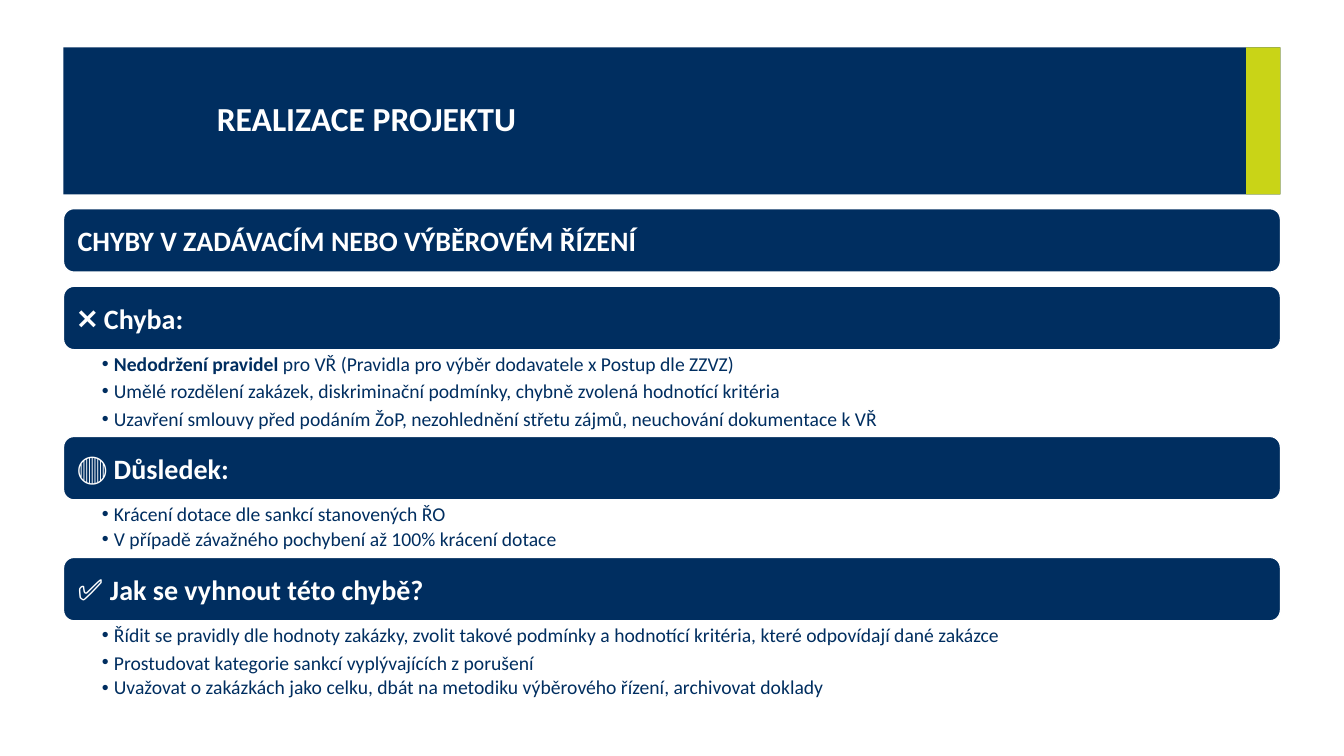
from lxml import etree
from pptx import Presentation
from pptx.dml.color import RGBColor
from pptx.enum.shapes import MSO_SHAPE
from pptx.enum.text import MSO_ANCHOR, MSO_AUTO_SIZE, PP_ALIGN
from pptx.oxml.ns import qn
from pptx.util import Inches, Pt

# Content
TITLE = "REALIZACE PROJEKTU"
TOPIC = "CHYBY V ZADÁVACÍM NEBO VÝBĚROVÉM ŘÍZENÍ"
# Icon, heading, list height, spacing of the last line, items made of (text, bold) runs
SECTIONS = [
    ("❌ ", "Chyba:", 0.86, 1.0, [
        [("Nedodržení pravidel", True),
         (" pro VŘ (Pravidla pro výběr dodavatele x Postup dle ZZVZ)", False)],
        [("Umělé rozdělení zakázek, diskriminační podmínky, chybně zvolená hodnotící kritéria", False)],
        [("Uzavření smlouvy před podáním ŽoP, nezohlednění střetu zájmů, neuchování dokumentace k VŘ", False)],
    ]),
    ("🔴 ", "Důsledek:", 0.57, 0.9, [
        [("Krácení dotace dle sankcí stanovených ŘO", False)],
        [("V případě závažného pochybení až 100% krácení dotace", False)],
    ]),
    ("✅ ", "Jak se vyhnout této chybě?", 0.82, 0.9, [
        [("Řídit se pravidly dle hodnoty zakázky, zvolit takové podmínky a hodnotící kritéria, "
          "které odpovídají dané zakázce", False)],
        [("Prostudovat kategorie sankcí vyplývajících z porušení", False)],
        [("Uvažovat o zakázkách jako celku, dbát na metodiku výběrového řízení, archivovat doklady", False)],
    ]),
]

# Look
NAVY = RGBColor(0x00, 0x2E, 0x60)
LIME = RGBColor(0xC9, 0xD4, 0x17)
WHITE = RGBColor(0xFF, 0xFF, 0xFF)
FONT = "Calibri"
RECT, ROUNDED = MSO_SHAPE.RECTANGLE, MSO_SHAPE.ROUNDED_RECTANGLE
TOP, MIDDLE = MSO_ANCHOR.TOP, MSO_ANCHOR.MIDDLE
LEFT_ALIGN, NO_AUTOFIT = PP_ALIGN.LEFT, MSO_AUTO_SIZE.NONE

# Grid in inches
LEFT, WIDTH = 0.63, 12.07
BANNER_TOP, BANNER_HEIGHT, ACCENT_WIDTH = 0.47, 1.46, 0.34
TITLE_LEFT, TITLE_WIDTH = 2.15, 9.96
GAP, BAR_HEIGHT = 0.14, 0.63
BULLET_INDENT = 0.12

prs = Presentation()
prs.slide_width, prs.slide_height = Inches(13.33), Inches(7.5)
slide = prs.slides.add_slide(prs.slide_layouts[4])


def place(shape, left, top, width, height):
    shape.left, shape.top = Inches(left), Inches(top)
    shape.width, shape.height = Inches(width), Inches(height)


def set_frame(frame, anchor, left, top, right, bottom):
    frame.word_wrap = True
    frame.auto_size = NO_AUTOFIT
    frame.vertical_anchor = anchor
    frame.margin_left, frame.margin_top = Inches(left), Inches(top)
    frame.margin_right, frame.margin_bottom = Inches(right), Inches(bottom)


def add_run(paragraph, text, size, color, bold):
    run = paragraph.add_run()
    run.text = text
    run.font.name, run.font.size, run.font.bold = FONT, Pt(size), bold
    run.font.color.rgb = color


def add_block(kind, left, top, width, height, color):
    block = slide.shapes.add_shape(kind, Inches(left), Inches(top), Inches(width), Inches(height))
    block.shadow.inherit = False
    block.fill.solid()
    block.fill.fore_color.rgb = color
    block.line.fill.background()
    return block


def add_bar(top, runs):
    bar = add_block(ROUNDED, LEFT, top, WIDTH, BAR_HEIGHT, NAVY)
    bar.line.color.rgb = WHITE
    bar.line.width = Pt(1)
    set_frame(bar.text_frame, MIDDLE, 0.11, 0.1, 0.11, 0.1)
    heading = bar.text_frame.paragraphs[0]
    heading.alignment = LEFT_ALIGN
    for text, size in runs:
        add_run(heading, text, size, WHITE, True)


def fill_list(body, top, height, last_spacing, items):
    place(body, LEFT, top, WIDTH, height)
    frame = body.text_frame
    set_frame(frame, TOP, 0.38, 0.02, 0.11, 0.02)
    for number, item in enumerate(items):
        paragraph = frame.add_paragraph() if number else frame.paragraphs[0]
        properties = paragraph._p.get_or_add_pPr()
        properties.set("marL", str(Inches(BULLET_INDENT)))
        properties.set("indent", str(-Inches(BULLET_INDENT)))
        etree.SubElement(properties, qn("a:buChar")).set("char", "•")
        paragraph.alignment = LEFT_ALIGN
        paragraph.space_before, paragraph.space_after = Pt(0), Pt(2.8)
        paragraph.line_spacing = last_spacing if number == len(items) - 1 else 1.0
        for text, bold in item:
            add_run(paragraph, text, 14, NAVY, bold)


# Banner, kept behind the title
banner = add_block(RECT, LEFT, BANNER_TOP, WIDTH, BANNER_HEIGHT, NAVY)
accent = add_block(RECT, LEFT + WIDTH - ACCENT_WIDTH, BANNER_TOP, ACCENT_WIDTH, BANNER_HEIGHT, LIME)
title = slide.shapes.title
for block in (banner, accent):
    title._element.addprevious(block._element)

# Title
place(title, TITLE_LEFT, BANNER_TOP, TITLE_WIDTH, BANNER_HEIGHT)
set_frame(title.text_frame, MIDDLE, 0, 0, 0, 0)
title_line = title.text_frame.paragraphs[0]
title_line.alignment = LEFT_ALIGN
title_line.line_spacing = 0.9
add_run(title_line, TITLE, 24, WHITE, True)

# Topic bar
top = BANNER_TOP + BANNER_HEIGHT + GAP
add_bar(top, [(TOPIC, 20)])
top += BAR_HEIGHT + GAP

# Sections: a heading bar with its list right below
bodies = [shape for shape in slide.placeholders if shape.placeholder_format.idx in (1, 2, 3, 4)]
for body, (icon, heading, height, last_spacing, items) in zip(bodies, SECTIONS):
    add_bar(top, [(icon, 21), (heading, 20)])
    fill_list(body, top + BAR_HEIGHT, height, last_spacing, items)
    top += BAR_HEIGHT + height

# Unused placeholders
for spare in bodies[len(SECTIONS):]:
    spare._element.getparent().remove(spare._element)

prs.save("out.pptx")
